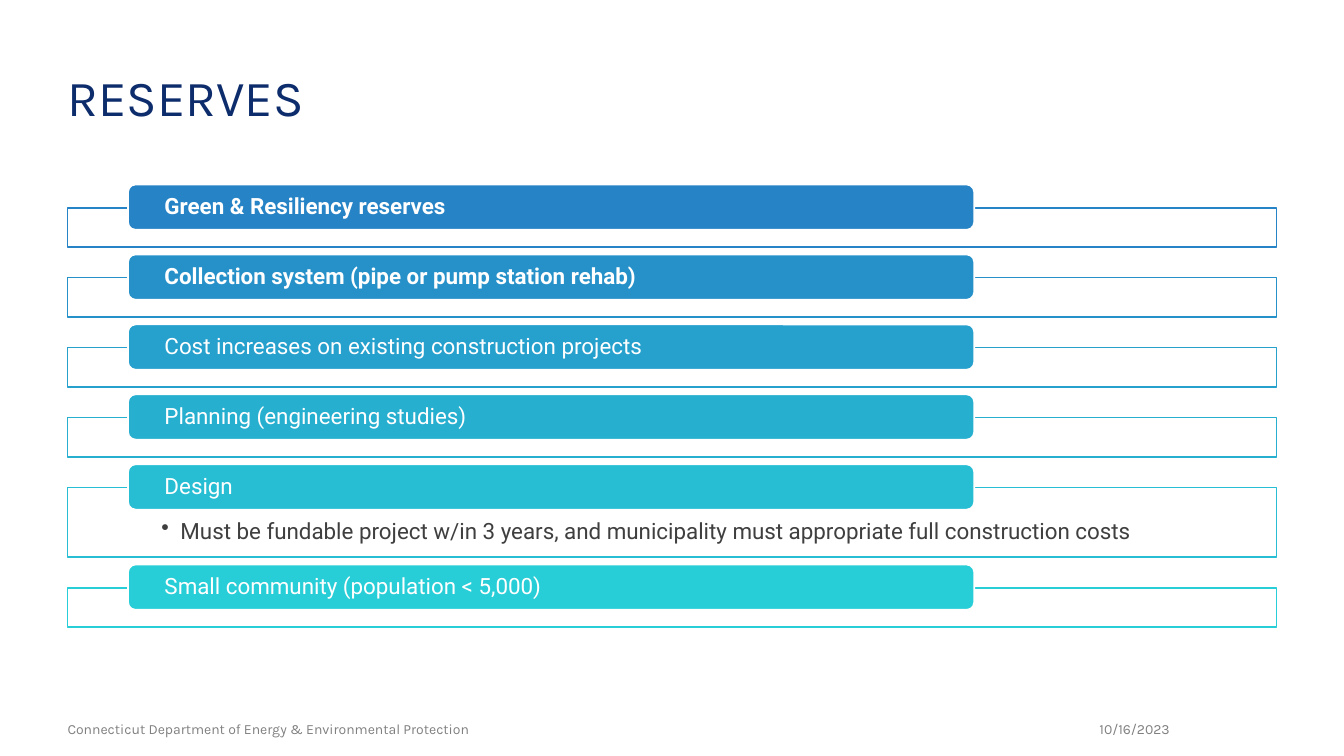
from pptx import Presentation
from pptx.dml.color import RGBColor as RGB
from pptx.enum.shapes import MSO_SHAPE as SHAPE
from pptx.enum.text import MSO_ANCHOR as ANCHOR, PP_ALIGN as ALIGN
from pptx.oxml.ns import qn
from pptx.util import Inches, Pt
from lxml.etree import SubElement

WHITE = RGB(0xFF, 0xFF, 0xFF)
NAVY = RGB(0x0D, 0x2C, 0x6C)
GRAY = RGB(0x80, 0x80, 0x80)
CHARCOAL = RGB(0x3F, 0x3F, 0x3F)
BLUE = RGB(0x26, 0x83, 0xC6)
AZURE = RGB(0x26, 0x91, 0xC9)
SKY = RGB(0x26, 0xA0, 0xCD)
CYAN = RGB(0x27, 0xAF, 0xD0)
AQUA = RGB(0x27, 0xBE, 0xD4)
TURQUOISE = RGB(0x27, 0xCE, 0xD7)

RESERVES = [
    ("Green &\u00a0Resiliency reserves", BLUE, True, None),
    ("Collection system (pipe or pump station rehab)", AZURE, True, None),
    ("Cost increases on existing construction projects", SKY, False, None),
    ("Planning (engineering studies)", CYAN, False, None),
    ("Design", AQUA, False,
     "Must be fundable project w/in 3 years, and municipality must "
     "appropriate full construction costs"),
    ("Small community (population < 5,000)", TURQUOISE, False, None),
]


def set_text(sp, text, font, size, color, insets=(0, 0, 0, 0),
             anchor=ANCHOR.MIDDLE, align=ALIGN.LEFT, spacing=1.0, bold=False):
    """Write one styled paragraph into a shape and return it."""
    tf = sp.text_frame
    tf.word_wrap = True
    tf.vertical_anchor = anchor
    tf.margin_left, tf.margin_top, tf.margin_right, tf.margin_bottom = map(Inches, insets)
    p = tf.paragraphs[0]
    p.alignment = align
    p.line_spacing = spacing
    r = p.add_run()
    r.text = text
    r.font.name, r.font.size, r.font.bold = font, Pt(size), bold
    r.font.color.rgb = color
    return p


def add_label(s, box, text, size, color, **style):
    """Add a Karla text box."""
    sp = s.shapes.add_textbox(*map(Inches, box))
    set_text(sp, text, "Karla", size, color, **style)


def add_box(s, kind, box, fill, line):
    """Add a filled, outlined shape without shadow."""
    sp = s.shapes.add_shape(kind, *map(Inches, box))
    sp.shadow.inherit = False
    sp.fill.solid()
    sp.fill.fore_color.rgb = fill
    sp.line.color.rgb = line
    sp.line.width = Pt(1.25)
    return sp


def add_bullet(p):
    """Give a paragraph a hanging bullet."""
    pPr = p._p.get_or_add_pPr()
    pPr.set("marL", str(Inches(0.19)))
    pPr.set("indent", str(-Inches(0.19)))
    SubElement(pPr, qn("a:buChar")).set("char", "•")


def add_reserve(s, box, name, color, bold, detail):
    """Add a frame with its title bar overlapping the top edge."""
    x, y, w, h = box
    frame = add_box(s, SHAPE.RECTANGLE, box, WHITE, color)
    if detail:
        add_bullet(set_text(frame, detail, "Roboto", 16, CHARCOAL,
                            (0.93, 0.32, 0.93, 0.12), ANCHOR.TOP, spacing=0.9))
    bar = add_box(s, SHAPE.ROUNDED_RECTANGLE, (x + 0.6, y - 0.23, w * 0.7, 0.45), color, WHITE)
    set_text(bar, name, "Roboto", 16, WHITE, (0.34, 0, 0.34, 0), spacing=0.9, bold=bold)


def add_reserve_list(s, box):
    """Stack the reserves in the box with equal gaps."""
    x, y, w, h = box
    heights = [0.69 if detail else 0.39 for *_, detail in RESERVES]
    gap = (h - sum(heights)) / (len(RESERVES) - 1)
    for reserve, height in zip(RESERVES, heights):
        add_reserve(s, (x, y, w, height), *reserve)
        y += height + gap


def add_footer(s, box):
    """Add the department name and the date."""
    x, y, w, h = box
    add_label(s, (x + w - 2.36, y, 2.36, h), "10/16/2023", 10, GRAY, align=ALIGN.RIGHT)
    add_label(s, (x, y, 6.45, h),
              "Connecticut Department of Energy & Environmental Protection", 10, GRAY)


def main():
    """Build and save the slide."""
    prs = Presentation()
    prs.slide_width, prs.slide_height = Inches(13.33), Inches(7.5)
    s = prs.slides.add_slide(prs.slide_layouts[6])
    add_label(s, (0.67, 0.77, 11.99, 0.98), "RESERVES", 36, NAVY,
              anchor=ANCHOR.TOP, spacing=0.8)
    add_footer(s, (0.67, 7.08, 10.93, 0.3))
    add_reserve_list(s, (0.67, 2.06, 11.99, 4.16))
    prs.save("out.pptx")


if __name__ == "__main__":
    main()
